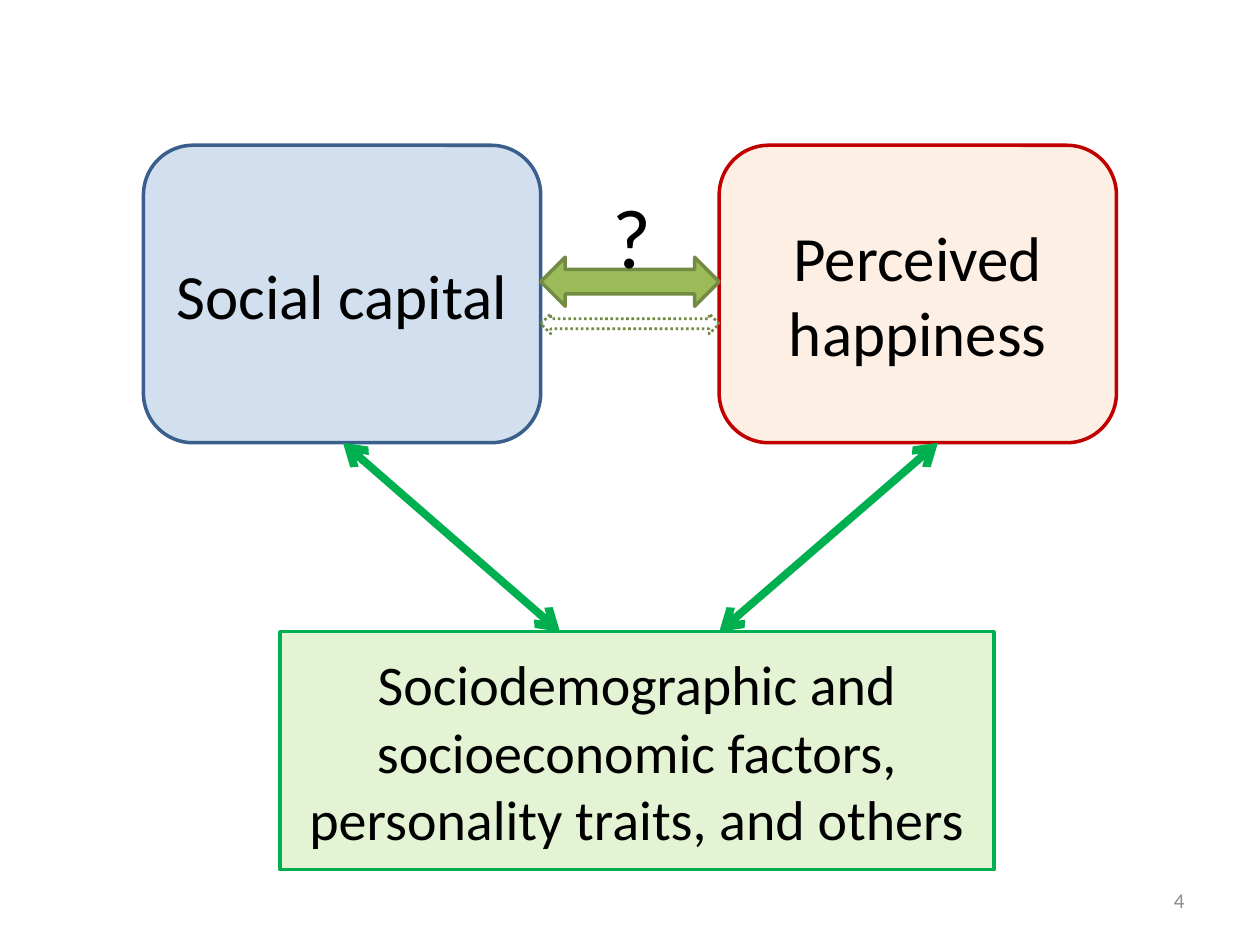
"""Build a slide relating social capital, perceived happiness and background factors."""
import pptx
import pptx.dml.color
import pptx.enum.dml
import pptx.enum.shapes
import pptx.enum.text
import pptx.oxml
import pptx.oxml.ns
import pptx.util

Pt = pptx.util.Pt
RGB = pptx.dml.color.RGBColor.from_string
SHAPE = pptx.enum.shapes.MSO_SHAPE
ALIGN = pptx.enum.text.PP_ALIGN
ANCHOR = pptx.enum.text.MSO_ANCHOR
COLORS = {
    "text": "000000", "number": "8C8C8C",
    "blue": "4F81BD", "blue line": "3A5F8C",
    "orange": "FAC090", "red line": "C00000",
    "lime": "92D050", "green line": "00B050",
    "olive": "9BBB59", "olive line": "738A42",
}


def add_element(parent, tag, **attributes):
    """Append a drawing element with the given attributes."""
    element = pptx.oxml.parse_xml(f"<a:{tag} {pptx.oxml.ns.nsdecls('a')}/>")
    for name, value in attributes.items():
        element.set(name, value)
    parent.append(element)


def write(box, text, size, color, align, anchor):
    """Put one formatted run into a box."""
    frame = box.text_frame
    frame.word_wrap = True
    frame.vertical_anchor = anchor
    para = frame.paragraphs[0]
    para.alignment = align
    span = para.add_run()
    span.text = text
    span.font.name = "Calibri"
    span.font.size = Pt(size)
    span.font.color.rgb = RGB(COLORS[color])


deck = pptx.Presentation()
deck.slide_width, deck.slide_height = Pt(720), Pt(540)
page = deck.slides.add_slide(deck.slide_layouts[6])

number = page.shapes.add_textbox(Pt(516), Pt(500), Pt(168), Pt(29))
write(number, "4", 12, "number", ALIGN.RIGHT, ANCHOR.MIDDLE)

concepts = [
    ("Social capital", SHAPE.ROUNDED_RECTANGLE, 82, 83, 227, 170, 36, "blue", "blue line"),
    ("Perceived happiness", SHAPE.ROUNDED_RECTANGLE, 411, 83, 227, 170, 36, "orange", "red line"),
    ("Sociodemographic and socioeconomic factors, personality traits, and others",
     SHAPE.RECTANGLE, 160, 361, 408, 136, 32, "lime", "green line"),
]
for text, kind, left, top, width, height, size, fill, line in concepts:
    box = page.shapes.add_shape(kind, Pt(left), Pt(top), Pt(width), Pt(height))
    box.shadow.inherit = False
    box.fill.solid()
    box.fill.fore_color.rgb = RGB(COLORS[fill])
    add_element(box.fill._xPr.solidFill[0], "alpha", val="25000")
    box.line.color.rgb = RGB(COLORS[line])
    box.line.width = Pt(2)
    write(box, text, size, "text", ALIGN.CENTER, ANCHOR.MIDDLE)

for top, height, weight, filled in [(147, 28, 2, True), (179.3, 11.5, 1.5, False)]:
    arrow = page.shapes.add_shape(SHAPE.LEFT_RIGHT_ARROW, Pt(309), Pt(top), Pt(102), Pt(height))
    arrow.shadow.inherit = False
    arrow.line.color.rgb = RGB(COLORS["olive line"])
    arrow.line.width = Pt(weight)
    if filled:
        arrow.fill.solid()
        arrow.fill.fore_color.rgb = RGB(COLORS["olive"])
    else:
        arrow.fill.background()
        arrow.line.dash_style = pptx.enum.dml.MSO_LINE.ROUND_DOT

question = page.shapes.add_textbox(Pt(343), Pt(102), Pt(28), Pt(66))
write(question, "?", 48, "text", ALIGN.LEFT, ANCHOR.TOP)

for concept_x, factor_x in [(196, 320), (536, 411)]:
    link = page.shapes.add_connector(
        pptx.enum.shapes.MSO_CONNECTOR.STRAIGHT,
        Pt(concept_x), Pt(253), Pt(factor_x), Pt(361))
    link.line.color.rgb = RGB(COLORS["green line"])
    link.line.width = Pt(4.5)
    for end in ("headEnd", "tailEnd"):
        add_element(link.line._get_or_add_ln(), end, type="arrow")
    add_element(link._element.spPr, "effectLst")

deck.save("out.pptx")
